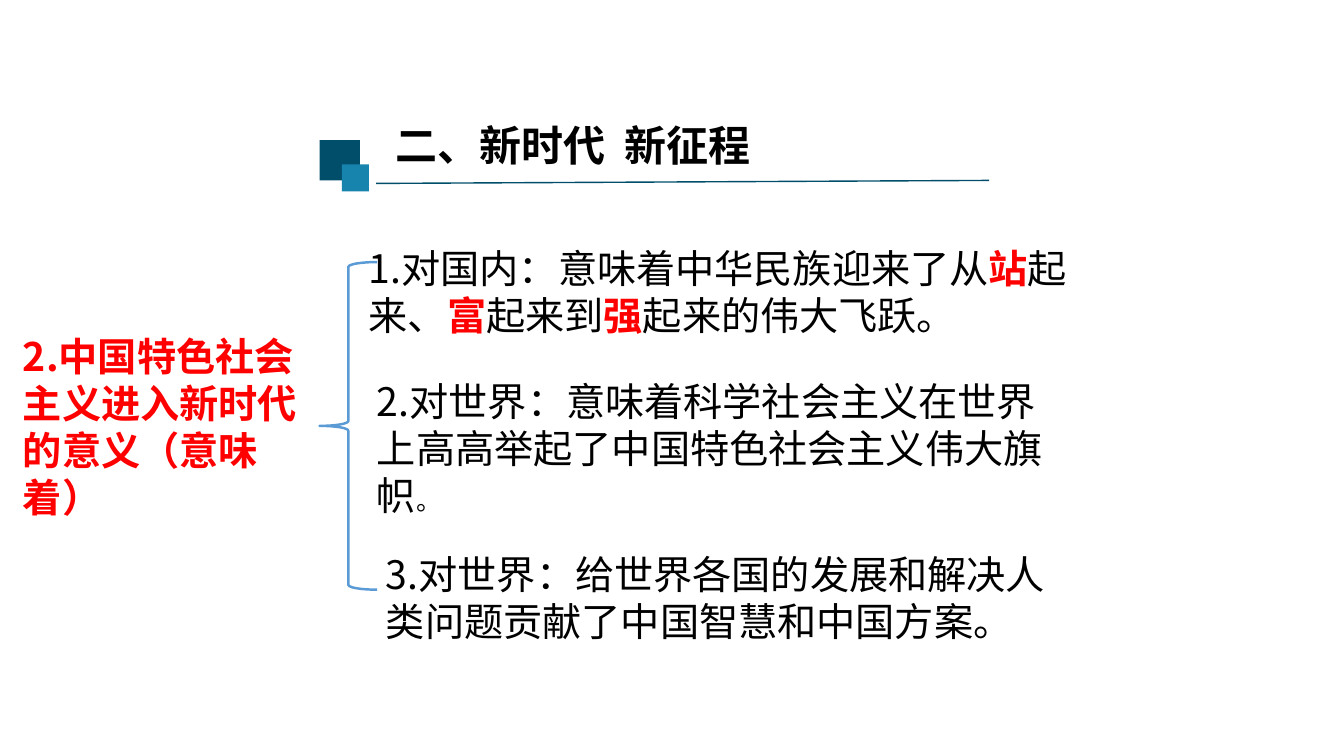
from lxml.etree import SubElement
from pptx import Presentation
from pptx.dml.color import RGBColor
from pptx.enum.shapes import MSO_CONNECTOR as Connector, MSO_SHAPE as Shape
from pptx.oxml.ns import qn
from pptx.util import Pt

PX = 9144
CJK = "Noto Sans CJK SC"
BLACK, RED, NAVY, TEAL, BLUE = "000000", "FF0000", "014E6A", "1784AD", "5B9BD5"


def px(length):
    """Turn px into EMU."""
    return length * PX


def color(hex_code):
    """Turn a hex string into a colour."""
    return RGBColor.from_string(hex_code)


def add_text(slide, box, runs):
    """Place one wrapped paragraph of (text, size, colour, bold, font) runs."""
    frame = slide.shapes.add_textbox(*map(px, box)).text_frame
    frame.word_wrap = True
    paragraph = frame.paragraphs[0]
    for text, size, hex_code, bold, typeface in runs:
        run = paragraph.add_run()
        run.text = text
        run.font.size = Pt(size)
        run.font.bold = bold
        run.font.name = typeface
        run.font.color.rgb = color(hex_code)
        SubElement(run.font._element, qn("a:ea")).set("typeface", CJK)


def add_square(slide, left, top, side, hex_code):
    """Place a plain filled square."""
    square = slide.shapes.add_shape(Shape.RECTANGLE, *map(px, (left, top, side, side)))
    square.shadow.inherit = False
    square.fill.solid()
    square.fill.fore_color.rgb = color(hex_code)
    square.line.fill.background()


def add_heading(slide, box, title):
    """Draw the underlined section title with its two squares."""
    left, top, width, height = box
    underline = slide.shapes.add_connector(
        Connector.STRAIGHT,
        *map(px, (left + 56, top + 68, left + 664, top + 65)))
    underline.line.color.rgb = color(NAVY)
    underline.line.width = Pt(1)
    SubElement(underline._element.spPr, qn("a:effectLst"))
    add_square(slide, left, top + 25, 40, NAVY)
    add_square(slide, left + 22, top + 49, 27, TEAL)
    add_text(slide, (left + 65, top, width - 65, height),
             [(title, 30, BLACK, True, CJK)])


def add_topic(slide, box, topic):
    """Draw the red topic and the brace that opens to its points."""
    left, top, width, height = box
    add_text(slide, (left, top + 65, 304, 196), [(topic, 28, RED, True, CJK)])
    brace = slide.shapes.add_shape(
        Shape.LEFT_BRACE, *map(px, (left + 304, top, width - 304, height)))
    brace.shadow.inherit = False
    brace.fill.background()
    brace.line.color.rgb = color(BLUE)
    brace.line.width = Pt(1.75)


def add_points(slide, box, points):
    """Place the points, each stepped a little further right."""
    left, top, width, height = box
    for step, (offset, point_width, point_height, runs) in enumerate(points):
        add_text(slide, (left + round(8.5 * step), top + offset,
                         point_width, point_height), runs)


def plain(text):
    """Describe a black run."""
    return text, 28, BLACK, False, CJK


def stressed(text):
    """Describe a bold red run."""
    return text, 28, RED, True, CJK


def main():
    """Build and save the slide."""
    deck = Presentation()
    deck.slide_width, deck.slide_height = px(1333), px(750)
    slide = deck.slides.add_slide(deck.slide_layouts[6])
    add_heading(slide, (317, 114, 732, 90), "二、新时代  新征程")
    add_topic(slide, (13, 260, 361, 325),
              "2.中国特色社会主义进入新时代的意义（意味着）")
    add_points(slide, (356, 237, 748, 433), [
        (0, 748, 132, [
            plain("1.对国内：意味着中华民族迎来了从"), stressed("站"),
            plain("起来、"), stressed("富"), plain("起来到"),
            stressed("强"), plain("起来的伟大飞跃。")]),
        (132, 711, 142, [
            plain("2.对世界：意味着科学社会主义在世界上高高举起了中国特色社会主义伟大旗帜"),
            ("。", 18, BLACK, False, "Calibri")]),
        (304, 703, 129, [
            plain("3.对世界：给世界各国的发展和解决人类问题贡献了中国智慧和中国方案。")]),
    ])
    deck.save("out.pptx")


if __name__ == "__main__":
    main()
